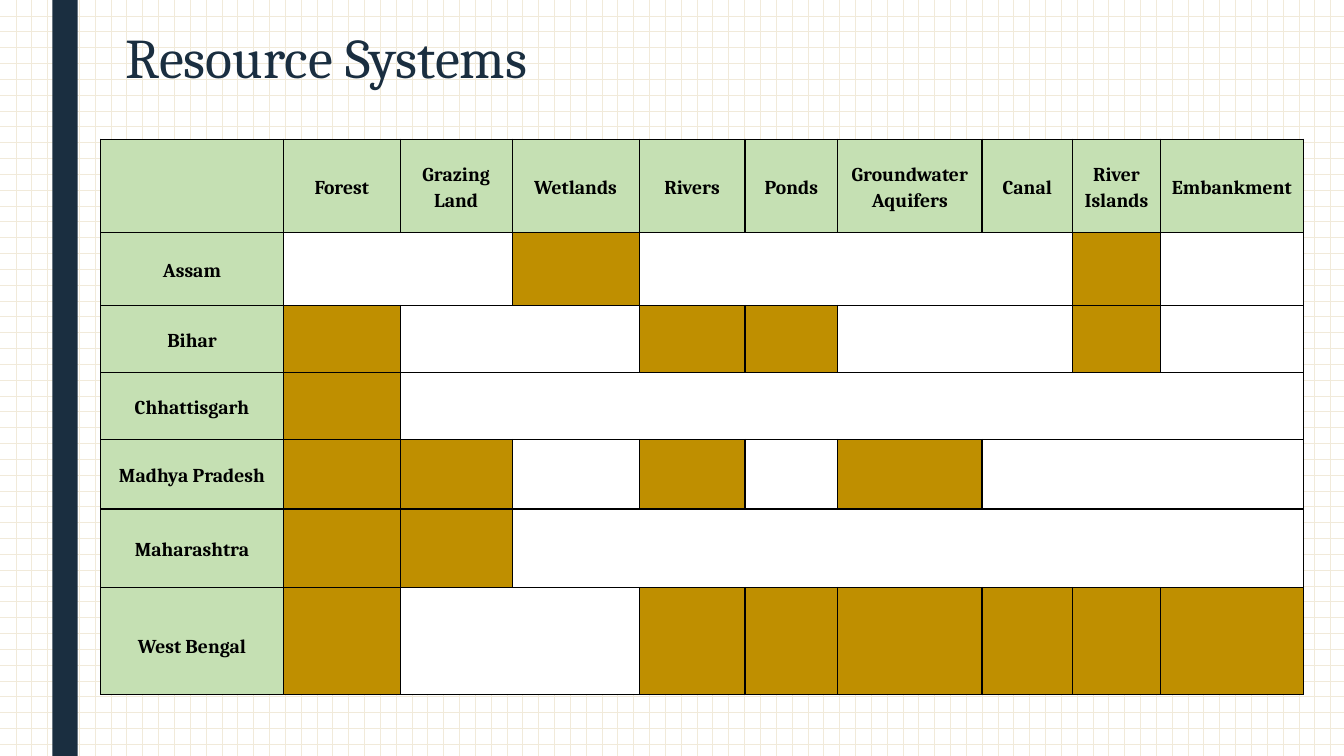
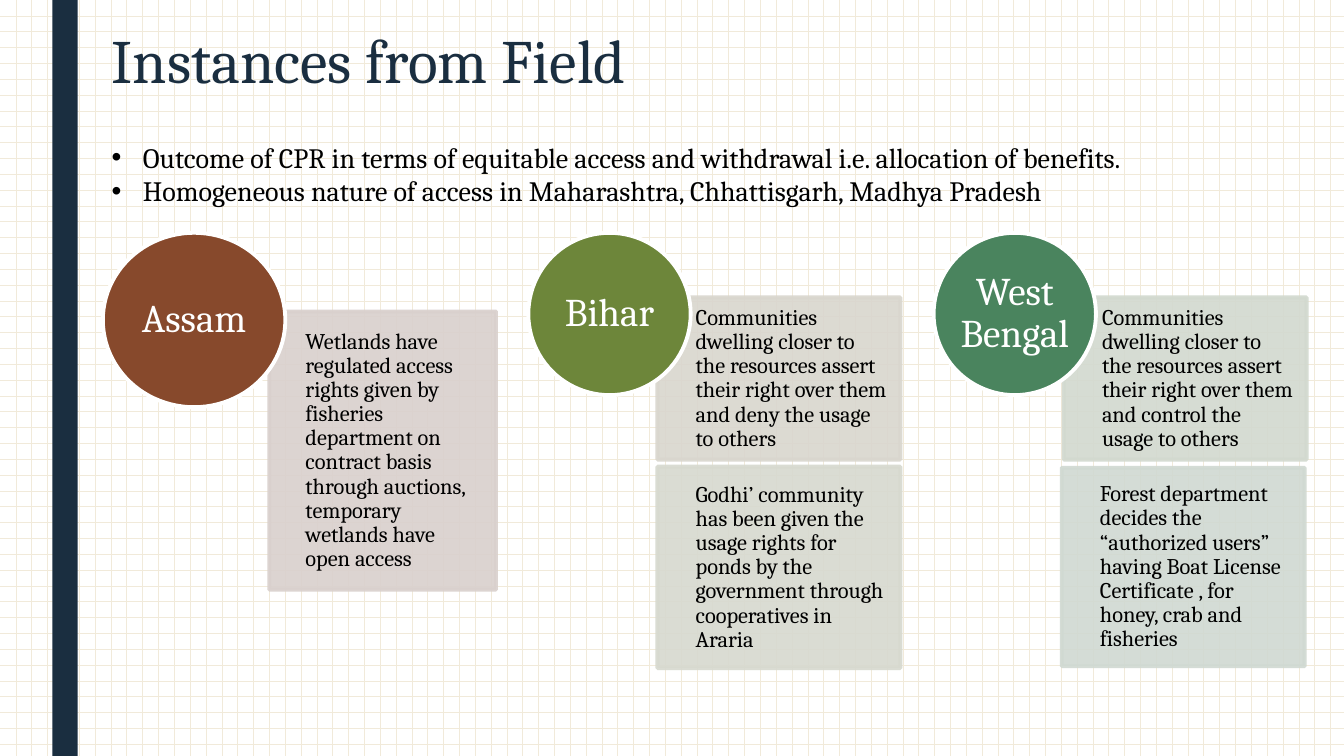
from itertools import groupby
from lxml.etree import SubElement
from pptx import Presentation
from pptx.dml.color import RGBColor
from pptx.enum.dml import MSO_PATTERN
from pptx.enum.shapes import MSO_SHAPE
from pptx.enum.text import MSO_ANCHOR, PP_ALIGN
from pptx.oxml.ns import qn
from pptx.util import Inches, Pt

FONT = "Cambria"
NAVY, BLACK, WHITE = "1A2E40", "000000", "FFFFFF"
GREEN, GOLD = "C5E0B3", "BF8F00"


def color(value):
    return RGBColor.from_string(value)


def write(frame, text, size, ink, spacing=1.0, align=PP_ALIGN.LEFT, bold=False):
    frame.word_wrap = True
    frame.text = text
    for para in frame.paragraphs:
        para.alignment = align
        para.line_spacing = spacing
        for span in para.runs:
            span.font.name = FONT
            span.font.size = Pt(size)
            span.font.bold = bold
            span.font.color.rgb = color(ink)


deck = Presentation()
deck.slide_width = Inches(13.33)
deck.slide_height = Inches(7.5)
blank = deck.slide_layouts[6]

paper = deck.slide_master.background.fill
paper.patterned()
paper.pattern = MSO_PATTERN.DOTTED_GRID
paper.fore_color.rgb = color("F1EADA")
paper.back_color.rgb = color(WHITE)

titles = [
    ("Resource Systems", 40, 1.15, 10.74, 1.12),
    ("Instances from Field", 44, 1.01, 11.13, 0.97),
]
pages = []
for text, size, left, width, height in titles:
    page = deck.slides.add_slide(blank)
    box = page.shapes.add_textbox(Inches(left), Inches(0.26), Inches(width), Inches(height))
    write(box.text_frame, text, size, NAVY, 0.89)
    pages.append(page)
table_page, field_page = pages

band = table_page.shapes.add_shape(
    MSO_SHAPE.RECTANGLE, Inches(0.52), Inches(0), Inches(0.25), deck.slide_height
)
band.shadow.inherit = False
band.fill.solid()
band.fill.fore_color.rgb = color(NAVY)
band.line.fill.background()
deck.slide_master.element.cSld.spTree.append(band.element)

headings = ["", "Forest", "Grazing Land", "Wetlands", "Rivers", "Ponds",
            "Groundwater Aquifers", "Canal", "River Islands", "Embankment"]
resources = {
    "Assam": "--X----X-",
    "Bihar": "X--XX--X-",
    "Chhattisgarh": "X--------",
    "Madhya Pradesh": "XX-X-X---",
    "Maharashtra": "XX-------",
    "West Bengal": "X--XXXXXX",
}
column_widths = [1.81, 1.16, 1.11, 1.26, 1.05, 0.92, 1.43, 0.9, 0.87, 1.42]
row_heights = [0.93, 0.72, 0.67, 0.66, 0.69, 0.78, 1.06]

table = table_page.shapes.add_table(
    len(row_heights), len(column_widths), Inches(1), Inches(1.38),
    Inches(sum(column_widths)), Inches(sum(row_heights)),
).table
table.first_row = False
table.horz_banding = False
for column, width in zip(table.columns, column_widths):
    column.width = Inches(width)
for row, height in zip(table.rows, row_heights):
    row.height = Inches(height)

states = list(resources)
for row_index in range(len(row_heights)):
    for column_index in range(len(column_widths)):
        cell = table.cell(row_index, column_index)
        cell.vertical_anchor = MSO_ANCHOR.MIDDLE
        cell.margin_left = cell.margin_right = cell.margin_top = Inches(0.01)
        cell.margin_bottom = 0
        properties = cell._tc.get_or_add_tcPr()
        for side in ("a:lnL", "a:lnR", "a:lnT", "a:lnB"):
            border = SubElement(properties, qn(side), w=str(Pt(1)))
            SubElement(SubElement(border, qn("a:solidFill")), qn("a:srgbClr"), val=BLACK)
        if row_index == 0 or column_index == 0:
            shade = GREEN
            label = headings[column_index] if row_index == 0 else states[row_index - 1]
            last = label == states[-1]
            write(cell.text_frame, label, 14, BLACK, 1.5 if last else 1.15, PP_ALIGN.CENTER, True)
            cell.text_frame.paragraphs[0].space_after = Pt(0 if last else 8)
        else:
            marked = resources[states[row_index - 1]][column_index - 1] == "X"
            shade = GOLD if marked else WHITE
        cell.fill.solid()
        cell.fill.fore_color.rgb = color(shade)

for row_index, marks in enumerate(resources.values(), 1):
    start = 1
    for mark, group in groupby(marks):
        count = len(list(group))
        if mark == "-" and count > 1:
            table.cell(row_index, start).merge(table.cell(row_index, start + count - 1))
        start += count

fields = [
    ("Assam", "87492C", 1.02, 1.81, 1.73, [
        ("D9D0CD", 2.67, 3.09, 2.25, 2.76,
         "Wetlands have regulated access rights given by fisheries department on contract basis "
         "through auctions, temporary wetlands have open access"),
    ]),
    ("Bihar", "6D863A", 5.24, 1.61, 1.61, [
        ("D9D6CE", 6.52, 2.95, 2.41, 1.61,
         "Communities dwelling closer to the resources assert their right over them "
         "and deny the usage to others"),
        ("D7D9CF", 6.52, 4.63, 2.41, 2,
         "Godhi’ community has been given the usage rights for ponds by the government "
         "through cooperatives in Araria"),
    ]),
    ("West Bengal", "4A845E", 9.26, 1.61, 1.61, [
        ("D2D9CF", 10.55, 2.95, 2.41, 1.61,
         "Communities dwelling closer to the resources assert their right over them "
         "and control the usage to others"),
        ("D0D9D2", 10.53, 4.64, 2.41, 1.97,
         "Forest department decides the “authorized users” having Boat License Certificate , "
         "for honey, crab and fisheries"),
    ]),
]
for state, state_fill, circle_left, circle_width, circle_height, cards in fields:
    for card_fill, left, top, width, height, text in cards:
        card = field_page.shapes.add_shape(
            MSO_SHAPE.RECTANGLE, Inches(left), Inches(top), Inches(width), Inches(height)
        )
        card.shadow.inherit = False
        card.fill.solid()
        card.fill.fore_color.rgb = color(card_fill)
        card.line.color.rgb = color(card_fill)
        card.line.width = Pt(2.75)
        for tint in card.element.spPr.iter(qn("a:srgbClr")):
            SubElement(tint, qn("a:alpha"), val="90000")
        frame = card.text_frame
        frame.margin_left = Inches(0.36 if state == "Assam" else 0.38)
        frame.margin_right = frame.margin_top = frame.margin_bottom = Inches(0.12)
        frame.vertical_anchor = MSO_ANCHOR.MIDDLE
        write(frame, text, 16, BLACK, 0.9)

    circle = field_page.shapes.add_shape(
        MSO_SHAPE.OVAL, Inches(circle_left), Inches(2.31),
        Inches(circle_width), Inches(circle_height),
    )
    circle.shadow.inherit = False
    circle.fill.solid()
    circle.fill.fore_color.rgb = color(state_fill)
    circle.line.color.rgb = color(WHITE)
    circle.line.width = Pt(2.75)
    frame = circle.text_frame
    frame.margin_left = frame.margin_right = frame.margin_top = frame.margin_bottom = 0
    frame.vertical_anchor = MSO_ANCHOR.MIDDLE
    write(frame, state, 28, WHITE, 0.9, PP_ALIGN.CENTER)

outcomes = [
    "Outcome of CPR in terms of equitable access and withdrawal i.e. allocation of benefits.",
    "Homogeneous nature of access in Maharashtra, Chhattisgarh, Madhya Pradesh",
]
box = field_page.shapes.add_textbox(Inches(1.01), Inches(1.34), Inches(11.13), Inches(1.11))
write(box.text_frame, "\n".join(outcomes), 20, BLACK)
for para in box.text_frame.paragraphs:
    properties = para._p.get_or_add_pPr()
    properties.set("marL", str(Inches(0.31)))
    properties.set("indent", str(-Inches(0.31)))
    SubElement(properties, qn("a:buFont"), typeface="Arial")
    SubElement(properties, qn("a:buChar"), char="•")

deck.save("out.pptx")
